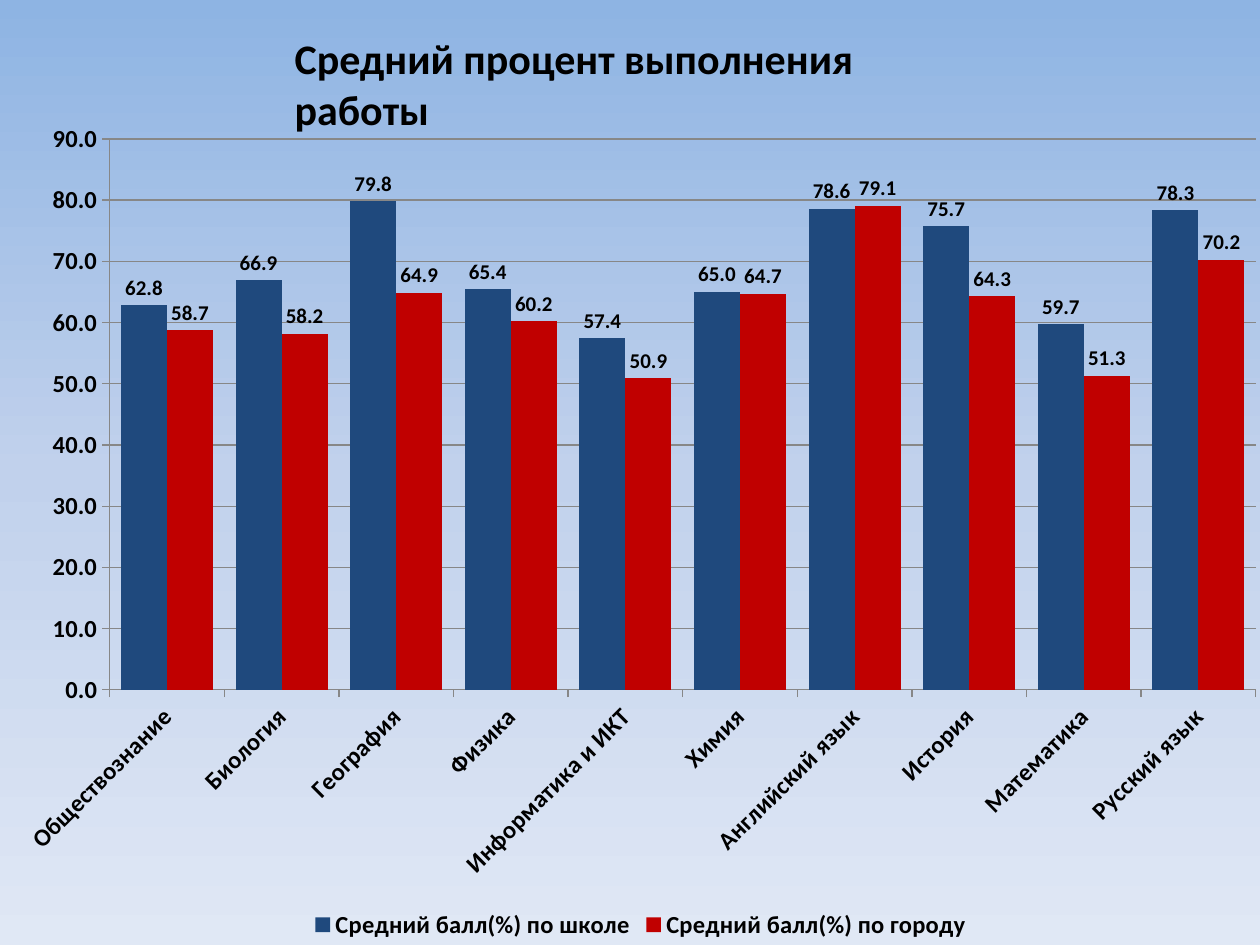
import copy
from dataclasses import dataclass

import pptx
import pptx.chart.data
import pptx.dml.color
import pptx.enum.chart
import pptx.enum.text
import pptx.oxml.ns
import pptx.util
from pptx.util import Inches


@dataclass(frozen=True)
class Theme:
    font: str = "Calibri"
    text: str = "000000"
    grid: str = "878787"
    school: str = "1F497D"
    city: str = "C00000"
    background: tuple = ((0, "8EB4E3"), (50, "C1D1EC"), (100, "E0E8F5"))
    title_size: int = 24
    axis_size: int = 14
    label_size: int = 12
    chart_size: int = 10


THEME = Theme()
NUMBER_FORMAT = "0.0"

SUBJECTS = ["Обществознание", "Биология", "География", "Физика",
            "Информатика и ИКТ", "Химия", "Английский язык", "История",
            "Математика", "Русский язык"]
SCORES = [
    ("Средний балл(%) по школе", THEME.school,
     [62.8, 66.9, 79.8, 65.4, 57.4, 65.0, 78.6, 75.7, 59.7, 78.3]),
    ("Средний балл(%) по городу", THEME.city,
     [58.7, 58.2, 64.9, 60.2, 50.9, 64.7, 79.1, 64.3, 51.3, 70.2]),
]


def rgb(value):
    return pptx.dml.color.RGBColor.from_string(value)


def style_font(font, size):
    font.name = THEME.font
    font.size = pptx.util.Pt(size)
    font.bold = True
    font.color.rgb = rgb(THEME.text)


def style_line(line):
    line.color.rgb = rgb(THEME.grid)
    line.width = pptx.util.Pt(0.75)


def fill_background(page):
    fill = page.background.fill
    fill.gradient()
    fill.gradient_angle = 270
    stops = page.element.find(".//" + pptx.oxml.ns.qn("a:gsLst"))
    stops.insert(1, copy.deepcopy(stops[0]))
    for stop, (position, color) in zip(fill.gradient_stops, THEME.background):
        stop.position = position / 100
        stop.color.rgb = rgb(color)


def add_title(page, text):
    box = page.shapes.add_textbox(Inches(2.24), Inches(0.21), Inches(5.7), Inches(0.51))
    box.text_frame.word_wrap = True
    box.text_frame.auto_size = pptx.enum.text.MSO_AUTO_SIZE.SHAPE_TO_FIT_TEXT
    para = box.text_frame.paragraphs[0]
    para.text = text
    style_font(para.font, THEME.title_size)


def style_axes(chart):
    for axis in (chart.category_axis, chart.value_axis):
        axis.major_tick_mark = pptx.enum.chart.XL_TICK_MARK.OUTSIDE
        style_font(axis.tick_labels.font, THEME.axis_size)
        style_line(axis.format.line)
    slant = chart.category_axis._element.find(".//" + pptx.oxml.ns.qn("a:bodyPr"))
    slant.set("rot", "-2700000")

    values = chart.value_axis
    values.minimum_scale, values.maximum_scale, values.major_unit = 0, 90, 10
    values.tick_labels.number_format = NUMBER_FORMAT
    values.tick_labels.number_format_is_linked = False
    style_line(values.major_gridlines.format.line)


def style_series(series, color):
    series.format.fill.solid()
    series.format.fill.fore_color.rgb = rgb(color)
    series.invert_if_negative = False
    labels = series.data_labels
    labels.show_value = True
    labels.position = pptx.enum.chart.XL_LABEL_POSITION.OUTSIDE_END
    labels.number_format = NUMBER_FORMAT
    labels.number_format_is_linked = False
    style_font(labels.font, THEME.label_size)


def add_score_chart(page):
    data = pptx.chart.data.CategoryChartData(number_format=NUMBER_FORMAT)
    data.categories = SUBJECTS
    for name, _, scores in SCORES:
        data.add_series(name, scores)
    chart = page.shapes.add_chart(
        pptx.enum.chart.XL_CHART_TYPE.COLUMN_CLUSTERED,
        Inches(0), Inches(0.85), Inches(10.17), Inches(6.65), data).chart
    chart.has_title = False
    chart.font.name = THEME.font
    chart.font.size = pptx.util.Pt(THEME.chart_size)
    chart.font.color.rgb = rgb(THEME.text)

    plot = chart.plots[0]
    plot.gap_width = 49
    plot.overlap = 0
    plot.vary_by_categories = False
    for series, (_, color, _) in zip(plot.series, SCORES):
        style_series(series, color)
    style_axes(chart)

    chart.has_legend = True
    chart.legend.position = pptx.enum.chart.XL_LEGEND_POSITION.BOTTOM
    chart.legend.include_in_layout = False
    style_font(chart.legend.font, THEME.axis_size)


def main():
    deck = pptx.Presentation()
    deck.slide_width, deck.slide_height = Inches(10), Inches(7.5)
    page = deck.slides.add_slide(deck.slide_layouts[6])
    fill_background(page)
    add_title(page, "Средний процент выполнения работы")
    add_score_chart(page)
    deck.save("out.pptx")


if __name__ == "__main__":
    main()
